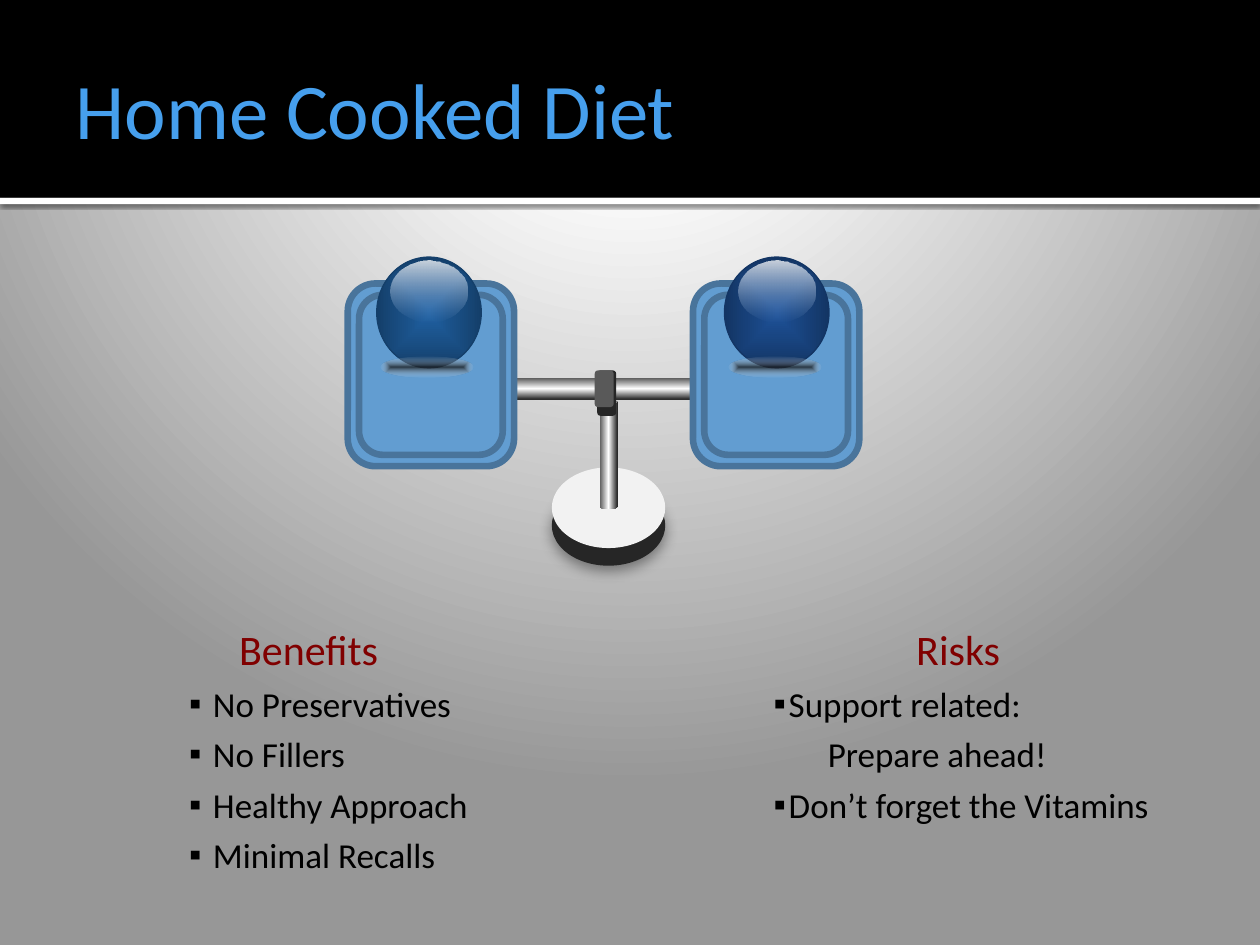
"""Build the Home Cooked Diet slide, weighing benefits against risks on a balance."""
import dataclasses
import pptx
import pptx.dml.color
import pptx.enum.shapes
import pptx.enum.text
import pptx.oxml
import pptx.oxml.ns
import pptx.util

Inches, Pt = pptx.util.Inches, pptx.util.Pt
RGB = pptx.dml.color.RGBColor.from_string
MSO = pptx.enum.shapes.MSO_SHAPE
TEXT = pptx.enum.text
qn = pptx.oxml.ns.qn
NS = pptx.oxml.ns.nsdecls("a")


@dataclasses.dataclass
class Theme:
    font: str = "Calibri"
    title: str = "469FED"
    heading: str = "800000"
    body: str = "000000"
    bar: str = "000000"
    rule: str = "FFFFFF"
    pan: str = "629DD1"
    pan_line: str = "49749B"
    disc: str = "F2F2F2"
    disc_side: str = "262626"
    clamp: str = "595959"
    title_size: int = 45
    heading_size: int = 24
    body_size: int = 20
    backdrop: tuple = ((0, "FFFFFF", 100), (20, "FFFFFF", 100), (100, "979797", 100))
    metal: tuple = ((0, "595959", 100), (50, "FFFFFF", 100), (100, "262626", 100))
    gloss: tuple = ((0, "FFFFFF", 77), (100, "8EB4E3", 0))
    contact: tuple = ((0, "171717", 76), (100, "FFFFFF", 0))
    balls: tuple = (("1F5FA0", "143F6A"), ("1D5096", "133564"))


T = Theme()


def gradient(parent, stops, angle=0, path=None, to=(50, 50, 50, 50)):
    gs = "".join(
        f'<a:gs pos="{pos * 1000}"><a:srgbClr val="{color}">'
        f'<a:alpha val="{alpha * 1000}"/></a:srgbClr></a:gs>'
        for pos, color, alpha in stops)
    rect = " ".join(f'{side}="{v * 1000}"' for side, v in zip("ltrb", to))
    way = (f'<a:path path="{path}"><a:fillToRect {rect}/></a:path>' if path
           else f'<a:lin ang="{angle * 60000}" scaled="0"/>')
    solid = parent.find(qn("a:solidFill"))
    parent.replace(solid, pptx.oxml.parse_xml(
        f'<a:gradFill {NS} rotWithShape="1"><a:gsLst>{gs}</a:gsLst>{way}</a:gradFill>'))


def shape(shapes, kind, at, fill, line=None, width=0.75, shadow=None):
    sp = shapes.add_shape(kind, *map(Inches, at))
    sp.shadow.inherit = False
    sp.fill.solid()
    sp.fill.fore_color.rgb = RGB(fill)
    if line:
        sp.line.color.rgb = RGB(line)
        sp.line.width = Pt(width)
    else:
        sp.line.fill.background()
    if shadow:
        alpha, blur, dist = shadow
        sp.element.spPr.find(qn("a:effectLst")).append(pptx.oxml.parse_xml(
            f'<a:outerShdw {NS} blurRad="{Pt(blur)}" dist="{Pt(dist)}" dir="5400000">'
            f'<a:srgbClr val="000000"><a:alpha val="{alpha * 1000}"/></a:srgbClr>'
            '</a:outerShdw>'))
    return sp


prs = pptx.Presentation()
prs.slide_width, prs.slide_height = Inches(10), Inches(7.5)
s = prs.slides.add_slide(prs.slide_layouts[3])
s.background.fill.solid()
gradient(s.element.find(".//" + qn("p:bgPr")), T.backdrop, path="circle", to=(10, -25, 10, 125))

shape(s.shapes, MSO.RECTANGLE, (0, 1.57, 10, 0.05), T.rule, shadow=(60, 2.5, 0.8))
bar = shape(s.shapes, MSO.RECTANGLE, (0, 0, 10, 1.57), T.bar)

title = s.shapes.title
bar.element.addnext(title.element)
title.left, title.top, title.width, title.height = map(Inches, (0.5, 0.17, 9, 1.37))
tf = title.text_frame
tf.auto_size = TEXT.MSO_AUTO_SIZE.NONE
tf.vertical_anchor = TEXT.MSO_ANCHOR.MIDDLE
tf.margin_left, tf.margin_right = Inches(0.1), Inches(0.05)
p = tf.paragraphs[0]
p.alignment = TEXT.PP_ALIGN.LEFT
r = p.add_run()
r.text = "Home Cooked Diet"
r.font.name, r.font.size, r.font.color.rgb = T.font, Pt(T.title_size), RGB(T.title)

columns = [
    (1, (0.9, 4.82, 3.1, 2.19), "Benefits", 0.69, 0.19,
     [("No Preservatives", True), ("No Fillers", True),
      ("Healthy Approach", True), ("Minimal Recalls", True)]),
    (2, (5.78, 4.82, 3.65, 1.79), "Risks", 0.38, 0.12,
     [("Support related:", True), ("Prepare ahead!", False),
      ("Don’t forget the Vitamins", True)]),
]
for idx, at, heading, margin, hang, items in columns:
    sp = s.placeholders[idx]
    sp.left, sp.top, sp.width, sp.height = map(Inches, at)
    tf = sp.text_frame
    tf.word_wrap = True
    tf.auto_size = TEXT.MSO_AUTO_SIZE.NONE
    for i, (text, bullet) in enumerate([(heading, False)] + items):
        p = tf.add_paragraph() if i else tf.paragraphs[0]
        pPr = p._p.get_or_add_pPr()
        left = 0 if i == 0 else margin if bullet else 0.69
        pPr.set("marL", str(Inches(left)))
        pPr.set("indent", str(Inches(-hang if bullet else 0)))
        mark = '<a:buChar %s char="▪"/>' if bullet else "<a:buNone %s/>"
        pPr.append(pptx.oxml.parse_xml(mark % NS))
        p.alignment = TEXT.PP_ALIGN.LEFT if i else TEXT.PP_ALIGN.CENTER
        p.line_spacing = 1.2
        p.space_before = Pt(0)
        r = p.add_run()
        r.text = text
        r.font.name = T.font
        r.font.size = Pt(T.body_size if i else T.heading_size)
        r.font.color.rgb = RGB(T.body if i else T.heading)

scale = s.shapes.add_group_shape().shapes
beam = shape(scale, MSO.CAN, (4.81, 1.42, 0.17, 3.33), T.clamp)
beam.rotation = 90
gradient(beam.element.spPr, T.metal)

for x in (2.76, 5.5):
    for inset in (0, 0.09):
        at = (x + inset, 2.25 + inset, 1.32 - 2 * inset, 1.45 - 2 * inset)
        shape(scale, MSO.ROUNDED_RECTANGLE, at, T.pan, T.pan_line, 3.78)

shape(scale, MSO.OVAL, (4.38, 3.85, 0.9, 0.64), T.disc_side, shadow=(40, 8, 3))
shape(scale, MSO.OVAL, (4.38, 3.71, 0.9, 0.64), T.disc)
post = shape(scale, MSO.CAN, (4.76, 3.17, 0.14, 0.87), T.clamp)
gradient(post.element.spPr, T.metal)
shape(scale, MSO.ROUNDED_RECTANGLE, (4.74, 2.94, 0.15, 0.36), T.disc_side)
shape(scale, MSO.ROUNDED_RECTANGLE, (4.72, 2.94, 0.15, 0.29), T.clamp)

for x, (core, edge) in zip((2.99, 5.75), T.balls):
    ball = shape(scale, MSO.OVAL, (x, 2.04, 0.83, 0.88), core, edge)
    gradient(ball.element.spPr, ((0, core, 100), (100, edge, 100)), path="shape")
    shine = shape(scale, MSO.OVAL, (x + 0.11, 2.07, 0.61, 0.48), core)
    gradient(shine.element.spPr, T.gloss, angle=90)
    contact = shape(scale, MSO.OVAL, (x + 0.03, 2.83, 0.74, 0.17), core)
    gradient(contact.element.spPr, T.contact, path="shape")

prs.save("out.pptx")
